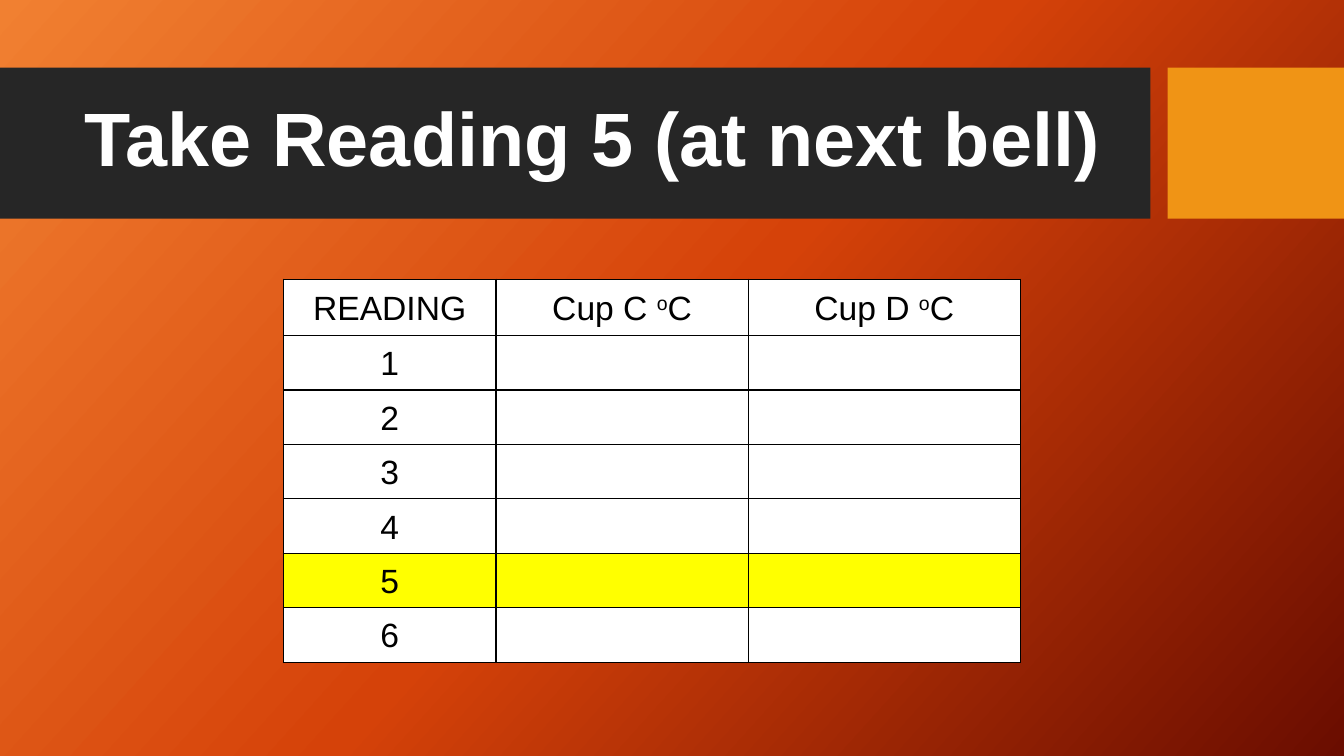
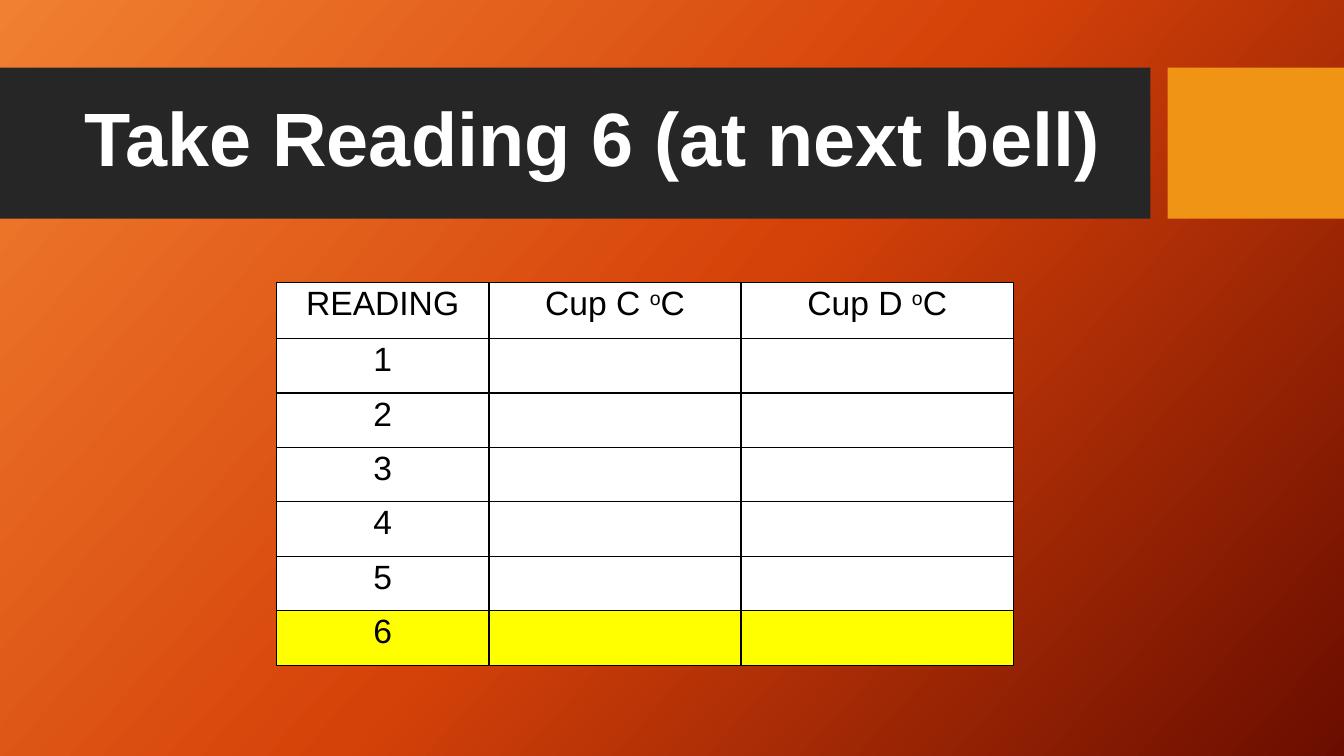
from copy import deepcopy
from dataclasses import dataclass

from lxml import etree
from pptx import Presentation
from pptx import util as u
from pptx.dml.color import RGBColor
from pptx.enum import shapes, text
from pptx.oxml import ns


@dataclass(frozen=True)
class Theme:
    """Colours, type sizes and font shared by the slides."""
    backdrop: tuple = ((0, "F18031"), (0.5, "D54209"), (1, "6A0D00"))
    backdrop_angle: int = 42
    title_band: str = "262626"
    accent: str = "F09415"
    title_ink: str = "FFFFFF"
    table_ink: str = "000000"
    paper: str = "FFFFFF"
    highlight: str = "FFFF00"
    font: str = "Arial"
    title_size: int = 54
    table_size: int = 24


THEME = Theme()
WIDTH, HEIGHT = 13.33, 7.5
BAND_TOP, BAND_HEIGHT = 0.67, 1.5
TITLE_BAND_WIDTH, ACCENT_WIDTH = 11.41, 1.75
TITLE_BOX = (0.74, 0.82, 10.51, 1.18)
COLUMN_WIDTHS = (2.11, 2.5, 2.7)
HEADER_HEIGHT, ROW_HEIGHT = 0.56, 0.54
READINGS = range(1, 7)
HEADERS = (
    [("READING", 0)],
    [("Cup C ", 0), ("o", 30), ("C", 0)],
    [("Cup D ", 0), ("o", 30), ("C", 0)],
)


def colour(code):
    """Return the colour for a hexadecimal code."""
    return RGBColor.from_string(code)


def write(frame, pieces, size, ink, bold=False, align=text.PP_ALIGN.LEFT, spacing=1.0):
    """Fill a frame with one paragraph of (text, raise in percent) pieces."""
    paragraph = frame.paragraphs[0]
    paragraph.alignment = align
    paragraph.line_spacing = spacing
    for words, lift in pieces:
        run = paragraph.add_run()
        run.text = words
        run.font.name = THEME.font
        run.font.size = u.Pt(size)
        run.font.bold = bold
        run.font.color.rgb = colour(ink)
        if lift:
            run._r.get_or_add_rPr().set("baseline", str(lift * 1000))


def paint_backdrop(master):
    """Give the master its diagonal gradient."""
    fill = master.background.fill
    fill.gradient()
    fill.gradient_angle = 360 - THEME.backdrop_angle
    stop_list = master.element.xpath("p:cSld/p:bg//a:gsLst")[0]
    stop_list.append(deepcopy(stop_list[0]))
    for stop, (position, code) in zip(fill.gradient_stops, THEME.backdrop):
        stop.position = position
        stop.color.rgb = colour(code)


def add_bands(slide, layout):
    """Draw the title band and accent block, and hand them to the layout."""
    bands = (
        (0, TITLE_BAND_WIDTH, THEME.title_band),
        (WIDTH - ACCENT_WIDTH, ACCENT_WIDTH, THEME.accent),
    )
    for order, (left, width, code) in enumerate(bands):
        box = map(u.Inches, (left, BAND_TOP, width, BAND_HEIGHT))
        band = slide.shapes.add_shape(shapes.MSO_SHAPE.RECTANGLE, *box)
        band.shadow.inherit = False
        band.fill.solid()
        band.fill.fore_color.rgb = colour(code)
        band.line.fill.background()
        band.element.xpath("p:nvSpPr/p:cNvPr")[0].set("id", str(100 + order))
        layout.shapes.element.insert(2 + order, band.element)


def place_title(slide, words, box):
    """Move the title placeholder to its box and write it."""
    title = slide.shapes.title
    title.left, title.top, title.width, title.height = map(u.Inches, box)
    frame = title.text_frame
    frame.word_wrap = True
    frame.auto_size = text.MSO_AUTO_SIZE.NONE
    frame.vertical_anchor = text.MSO_ANCHOR.MIDDLE
    write(frame, [(words, 0)], THEME.title_size, THEME.title_ink, bold=True, spacing=0.9)


def add_borders(cell):
    """Rule all four sides of a cell."""
    properties = cell._tc.get_or_add_tcPr()
    for side in ("lnL", "lnR", "lnT", "lnB"):
        line = etree.SubElement(properties, ns.qn("a:" + side), w=str(u.Pt(1)))
        solid = etree.SubElement(line, ns.qn("a:solidFill"))
        etree.SubElement(solid, ns.qn("a:srgbClr"), val=THEME.table_ink)


def place_readings(slide, current, left, top, anchor):
    """Place the readings table with the current reading highlighted."""
    row_heights = [HEADER_HEIGHT] + [ROW_HEIGHT] * len(READINGS)
    box = map(u.Inches, (left, top, sum(COLUMN_WIDTHS), sum(row_heights)))
    table = slide.shapes.add_table(len(row_heights), len(COLUMN_WIDTHS), *box).table
    table.first_row = table.horz_banding = False
    for column, width in zip(table.columns, COLUMN_WIDTHS):
        column.width = u.Inches(width)
    for row, height in zip(table.rows, row_heights):
        row.height = u.Inches(height)

    contents = [HEADERS] + [([(str(n), 0)], [], []) for n in READINGS]
    for number, (row, entries) in enumerate(zip(table.rows, contents)):
        for cell, pieces in zip(row.cells, entries):
            add_borders(cell)
            cell.fill.solid()
            cell.fill.fore_color.rgb = colour(
                THEME.highlight if number == current else THEME.paper)
            cell.margin_left = cell.margin_right = u.Inches(0.07)
            cell.margin_top = cell.margin_bottom = 0
            cell.vertical_anchor = anchor
            write(cell.text_frame, pieces, THEME.table_size, THEME.table_ink,
                  align=text.PP_ALIGN.CENTER, spacing=1.07)


def reading_slide(slide, current, left, top, anchor):
    """Build the slide that calls for one reading."""
    place_title(slide, f"Take Reading {current} (at next bell)", TITLE_BOX)
    place_readings(slide, current, left, top, anchor)


def main():
    """Build and save the deck."""
    deck = Presentation()
    deck.slide_width, deck.slide_height = u.Inches(WIDTH), u.Inches(HEIGHT)
    paint_backdrop(deck.slide_master)
    layout = deck.slide_layouts.get_by_name("Title Only")
    calls = (
        (5, 2.81, 2.77, text.MSO_ANCHOR.MIDDLE),
        (6, 2.74, 2.8, text.MSO_ANCHOR.TOP),
    )
    for call in calls:
        reading_slide(deck.slides.add_slide(layout), *call)
    add_bands(deck.slides[0], layout)
    deck.save("out.pptx")


if __name__ == "__main__":
    main()
